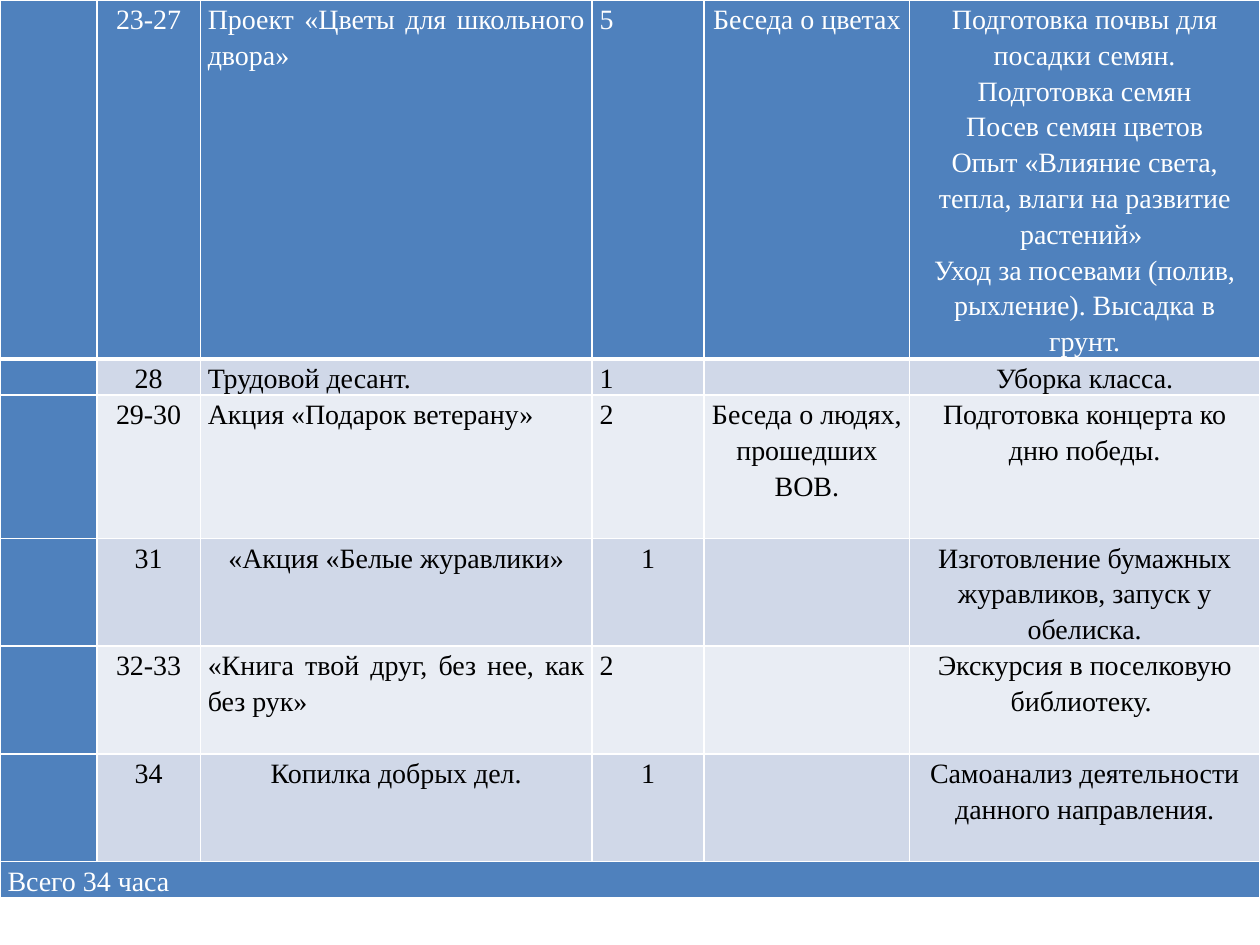
from dataclasses import dataclass

from lxml.etree import SubElement
from pptx import Presentation
from pptx.dml.color import RGBColor
from pptx.enum.text import PP_ALIGN
from pptx.oxml.ns import qn
from pptx.util import Inches, Pt


@dataclass(frozen=True)
class Theme:
    """Colours, type and line settings of the plan."""
    accent: str = "4F81BD"
    bands: tuple = ("E9EDF4", "D0D8E8")
    light: str = "FFFFFF"
    dark: str = "000000"
    font: str = "Times New Roman"
    size: int = 16
    spacing: float = 1.15
    inset: float = 0.06
    rule: int = 1
    heavy_rule: int = 3


THEME = Theme()
WIDTH, HEIGHT = 10, 7.5
COLUMN_SHARES = (0.077, 0.082, 0.311, 0.089, 0.163, 0.278)
LINE_SHARE = 0.038
LINES_PER_ROW = (10, 1, 4, 3, 3, 3, 1)
CENTRED_TOPICS = (3, 5)
TOTAL = "Всего 34 часа"
LESSONS = (
    ("", "23-27", "Проект «Цветы для школьного двора»", "5", "Беседа о цветах",
     "Подготовка почвы для посадки семян.\nПодготовка семян\n"
     "Посев семян цветов\n"
     "Опыт «Влияние света, тепла, влаги на развитие растений» \n"
     "Уход за посевами (полив, рыхление). Высадка в грунт."),
    ("", "28", "Трудовой десант.", "1", "", "Уборка класса."),
    ("", "29-30", "Акция «Подарок ветерану»", "2",
     "Беседа о людях, прошедших ВОВ.", "Подготовка концерта ко дню победы."),
    ("", "31", "«Акция «Белые журавлики»", "1", "",
     "Изготовление бумажных журавликов, запуск у обелиска."),
    ("", "32-33", "«Книга твой друг, без нее, как без рук»", "2", "",
     "Экскурсия в поселковую библиотеку. "),
    ("", "34", "Копилка добрых дел.", "1", "",
     "Самоанализ деятельности данного направления."),
)


def add_plan(slide):
    """Add the empty table with its column and row sizes."""
    plan = slide.shapes.add_table(
        len(LINES_PER_ROW), len(COLUMN_SHARES), 0, 0, Inches(WIDTH),
        Inches(HEIGHT * LINE_SHARE * sum(LINES_PER_ROW))).table
    plan.first_row = plan.horz_banding = False
    for column, share in zip(plan.columns, COLUMN_SHARES):
        column.width = Inches(WIDTH * share)
    for row, lines in zip(plan.rows, LINES_PER_ROW):
        row.height = Inches(HEIGHT * LINE_SHARE * lines)
    return plan


def draw_borders(cell, row):
    """Rule all four sides, heavier between the first two rows."""
    heavy_side = {0: "B", 1: "T"}.get(row)
    properties = cell._tc.get_or_add_tcPr()
    for side in "LRTB":
        points = THEME.heavy_rule if side == heavy_side else THEME.rule
        line = SubElement(properties, qn(f"a:ln{side}"), w=str(Pt(points)))
        fill = SubElement(line, qn("a:solidFill"))
        SubElement(fill, qn("a:srgbClr"), val=THEME.light)


def style_cell(cell, row, fill):
    """Set the borders, fill and insets of a cell."""
    draw_borders(cell, row)
    cell.fill.solid()
    cell.fill.fore_color.rgb = RGBColor.from_string(fill)
    cell.margin_left = cell.margin_right = Inches(THEME.inset)
    cell.margin_top = cell.margin_bottom = 0


def write_cell(cell, text, alignment, colour):
    """Write one paragraph per line of text, or size the empty cell."""
    frame = cell.text_frame
    if not text:
        SubElement(frame.paragraphs[0]._p, qn("a:endParaRPr"),
                   sz=str(THEME.size * 100))
        return
    for index, line in enumerate(text.split("\n")):
        paragraph = frame.add_paragraph() if index else frame.paragraphs[0]
        paragraph.alignment = alignment
        paragraph.line_spacing = THEME.spacing
        run = paragraph.add_run()
        run.text = line
        run.font.name = THEME.font
        run.font.size = Pt(THEME.size)
        run.font.color.rgb = RGBColor.from_string(colour)


def fill_lesson(plan, row, lesson):
    """Fill one lesson row, the first one in header colours."""
    header = row == 0
    for column, text in enumerate(lesson):
        cell = plan.cell(row, column)
        accented = header or column == 0
        style_cell(cell, row, THEME.accent if accented else THEME.bands[row % 2])
        justified = column in (2, 3) and row not in CENTRED_TOPICS
        write_cell(cell, text,
                   PP_ALIGN.JUSTIFY if justified else PP_ALIGN.CENTER,
                   THEME.light if header else THEME.dark)


def fill_total(plan):
    """Merge the last row and write the total hours."""
    row = len(LESSONS)
    for column in range(len(COLUMN_SHARES)):
        style_cell(plan.cell(row, column), row, THEME.accent)
    total = plan.cell(row, 0)
    total.merge(plan.cell(row, len(COLUMN_SHARES) - 1))
    write_cell(total, TOTAL, PP_ALIGN.LEFT, THEME.light)


def main():
    """Build the lesson plan slide and save it."""
    deck = Presentation()
    deck.slide_width, deck.slide_height = Inches(WIDTH), Inches(HEIGHT)
    slide = deck.slides.add_slide(deck.slide_layouts[6])
    plan = add_plan(slide)
    for row, lesson in enumerate(LESSONS):
        fill_lesson(plan, row, lesson)
    fill_total(plan)
    deck.save("out.pptx")


if __name__ == "__main__":
    main()
